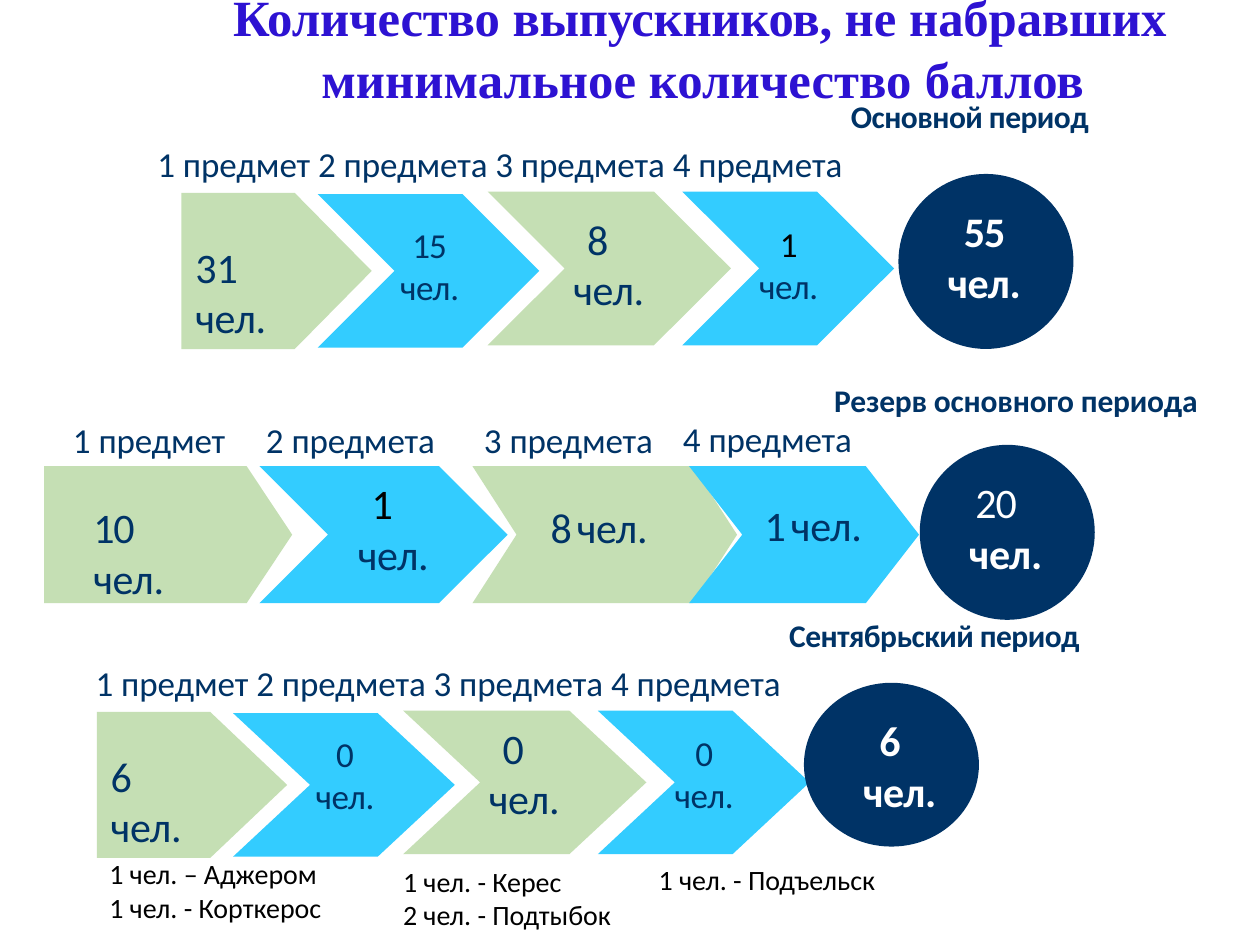
from pptx import Presentation
from pptx.dml.color import RGBColor
from pptx.enum.shapes import MSO_SHAPE
from pptx.enum.text import PP_ALIGN
from pptx.util import Pt

COLORS = {"title": "2D12D2", "navy": "003366", "green": "C5DFB4",
          "blue": "33CCFF", "white": "FFFFFF", "black": "000000"}
UNIT = ("чел.", -0.2)


def rgb(name):
    return RGBColor.from_string(COLORS[name])


def para(*runs, size=24, color="navy", bold=False, left=0, first=0,
         before=0, line=None, align=None, font="Calibri"):
    """Describe a paragraph; each run is (text, letter spacing)."""
    return dict(runs=runs, size=size, color=color, bold=bold, left=left, first=first,
                before=before, line=line, align=align, font=font)


def add_text(s, x, y, w, h, paras, top=1, side=0, wrap=True):
    tf = s.shapes.add_textbox(Pt(x), Pt(y), Pt(w), Pt(h)).text_frame
    tf.word_wrap = wrap
    tf.margin_left = tf.margin_right = Pt(side)
    tf.margin_top, tf.margin_bottom = Pt(top), Pt(0)
    for i, d in enumerate(paras):
        p = tf.paragraphs[0] if i == 0 else tf.add_paragraph()
        for text, spacing in d["runs"]:
            r = p.add_run()
            r.text = text
            r._r.get_or_add_rPr().set("spc", str(round(spacing * 100)))
        pPr = p._p.get_or_add_pPr()
        pPr.set("marL", str(Pt(d["left"])))
        pPr.set("indent", str(Pt(d["first"])))
        p.alignment = d["align"]
        p.space_before = Pt(d["before"])
        if d["line"]:
            p.line_spacing = Pt(d["line"])
        f = p.font
        f.name, f.size, f.bold = d["font"], Pt(d["size"]), d["bold"]
        f.color.rgb = rgb(d["color"])


def add_figure(s, kind, x, y, w, h, color):
    sp = s.shapes.add_shape(kind, Pt(x), Pt(y), Pt(w), Pt(h))
    sp.shadow.inherit = False
    sp.fill.solid()
    sp.fill.fore_color.rgb = rgb(color)
    sp.line.fill.background()
    return sp


def add_arrow(s, index, x, y, w, h, depth):
    """The first arrow of a row has a flat back; colours alternate."""
    kind = MSO_SHAPE.CHEVRON if index else MSO_SHAPE.PENTAGON
    sp = add_figure(s, kind, x, y, w, h, ("green", "blue")[index % 2])
    sp.adjustments[0] = depth / min(w, h)


def title(s, x, y, w, h):
    add_text(s, x, y, w, h, [para(
        ("Количество ", -0.1), ("выпускников, ", -0.2), ("не ", 0), ("набравших ", -0.1),
        ("минимальное количество ", 0), ("баллов", -0.1),
        size=29, color="title", bold=True, left=80.6, first=-50.4, line=35.5,
        font="Times New Roman")])


def total_circle(s, x, y, h, number, left=10, bold=True, text_dx=27.4):
    add_figure(s, MSO_SHAPE.OVAL, x, y, 100, h, "navy")
    add_text(s, x + text_dx, y + 17.3, 44, 60, [
        para((number, -0.5), color="white", bold=bold, left=left),
        para(UNIT, color="white", bold=True, left=0.7)])


def period_heading(s, x, y, name):
    """Period name on the right, subject labels below it."""
    add_text(s, x, y, 612, 56, [
        para((name, -0.3), size=18, bold=True, left=397),
        para(("1 предмет 2 предмета 3 предмета 4 предмета", -0.07),
             size=20, left=0.7, before=4.2)], top=5.8)


def period_row(s, x, y, h, text_y, first_w, values, last_color="navy"):
    """Four arrows with their counts."""
    arrows = [(0, 0, 108.7, h), (77.8, 0.7, 126.7, h - 1.5),
              (175, -0.7, 139, h - 1.5), (286.2, -0.7, 121, h - 1.5)]
    for i, (dx, dy, w, height) in enumerate(arrows):
        add_arrow(s, i, x + dx, y + dy, w, height, 44)

    one, two, three, four = values
    add_text(s, x + 7.2, text_y + 15.8, first_w, 31,
             [para((one + " ", 0), UNIT, left=0.7)])
    for dx, dy, number, color in ((123.8, 5.8, two, "navy"),
                                  (329, 5, four, last_color)):
        add_text(s, x + dx, text_y + dy, 36, 50, [
            para((number, -0.5), size=20, color=color, align=PP_ALIGN.CENTER),
            para(UNIT, size=20, align=PP_ALIGN.CENTER)])
    add_text(s, x + 223.2, text_y, 42.5, 60,
             [para((three, -0.5), left=8.6), para(UNIT, left=0.7)])


def reserve_row(s, x, y, h):
    """Reserve period: wider arrows with separate labels."""
    arrows = [(0, 141.8, 26), (123.1, 141.8, 39.2), (244.8, 151.2, 25.2), (368.6, 131.4, 30.4)]
    for i, (dx, w, depth) in enumerate(arrows):
        add_arrow(s, i, x + dx, y, w, h, depth)

    # Counts inside the arrows
    for dx, dy, w, number, spacing in ((27.4, 19.4, 66, "10 ", -0.7),
                                       (288.7, 19.4, 57.6, "8 ", -2.6),
                                       (411.1, 18, 57.6, "1 ", -2.6)):
        add_text(s, x + dx, y + dy, w, 31, [para((number, spacing), UNIT, left=0.7)])

    # Subject labels
    for dx, w, number, word in ((15.8, 88.6, "1 ", "предмет"),
                                (250.6, 98, "3 ", "предмета")):
        add_text(s, x + dx, y - 28, w, 26,
                 [para((number, 0), (word, -0.1), size=20, left=0.7)])
    add_text(s, x + 126, y - 36.7, 98, 101.5, [
        para(("2 ", 0), ("предмета", -0.1), size=20, left=0.7),
        para(("1", -0.5), color="black", left=61.2, before=9.8),
        para(UNIT, left=53.3)], top=9.4)
    add_text(s, x + 364.3, y - 56.2, 298, 52.6, [
        para(("Резерв основного периода", -0.1), size=18, bold=True, left=87.1, line=28.1),
        para(("4 ", 0), ("предмета", -0.1), size=20, left=0.7, line=23.2)])


def school_notes(s, x, y):
    """Counts by school, one box under each group of arrows."""
    notes = [(0, 0, 172, 46, True, ["1 чел. – Аджером", "1 чел. - Корткерос"]),
             (167.8, 4.3, 148, 46, False, ["1 чел. - Керес", "2 чел. - Подтыбок"]),
             (313.9, 3.6, 156, 27, False, ["1 чел. - Подъельск"])]
    for dx, dy, w, h, wrap, lines in notes:
        add_text(s, x + dx, y + dy, w, h,
                 [para((line, 0), size=16, color="black") for line in lines],
                 top=3.6, side=7.2, wrap=wrap)


def main():
    prs = Presentation()
    prs.slide_width, prs.slide_height = Pt(720), Pt(540)
    s = prs.slides.add_slide(prs.slide_layouts[6])

    title(s, 103, -9.8, 584.6, 97)

    # Reserve of the main period
    reserve_row(s, 25.2, 266.4, 78.3)
    total_circle(s, 525.6, 254.2, 100, "20", left=4.3, bold=False)

    # September period
    period_row(s, 55.4, 406.8, 83.5, 411.8, 56, ["6", "0", "0", "0"])
    total_circle(s, 459.4, 390.2, 93.6, "6", text_dx=33.1)
    period_heading(s, 54, 346.3, "Сентябрьский период")

    # Main period
    period_row(s, 103.7, 110.2, 89.3, 121, 68.5, ["31", "15", "8", "1"], "black")
    total_circle(s, 513.4, 99.4, 100, "55")
    period_heading(s, 89.3, 49.7, "Основной период")

    school_notes(s, 55.4, 486)
    prs.save("out.pptx")


if __name__ == "__main__":
    main()
